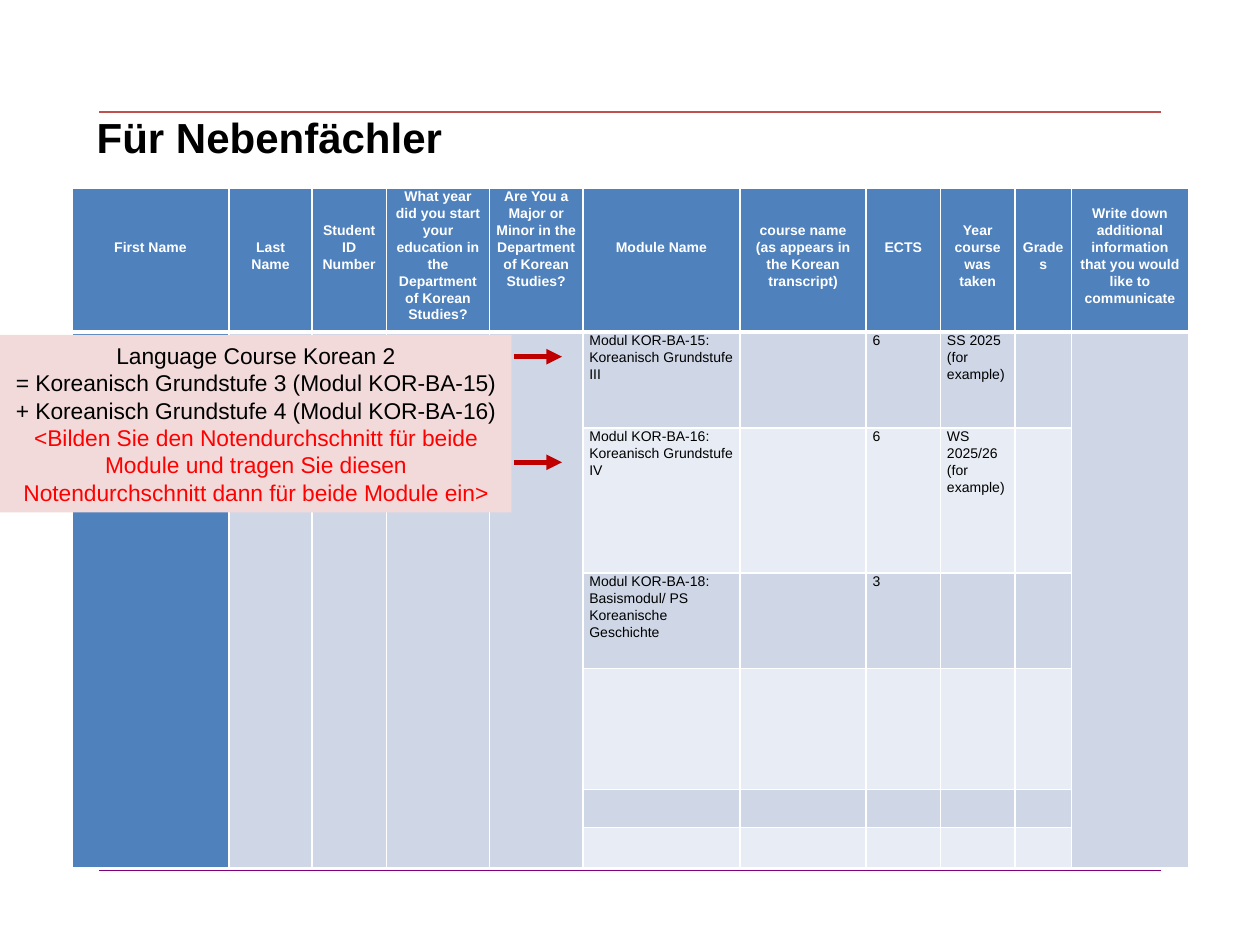
from dataclasses import dataclass

from lxml.etree import SubElement as Sub
from pptx import Presentation as Deck
from pptx.dml.color import RGBColor as Rgb
from pptx.enum.shapes import MSO_CONNECTOR as Link, MSO_SHAPE as Form
from pptx.enum.text import MSO_ANCHOR as Anchor, PP_ALIGN as Align
from pptx.oxml import parse_xml as parse_node
from pptx.oxml.ns import nsdecls, qn
from pptx.util import Cm, Pt


@dataclass(frozen=True)
class Theme:
    """Colours, type sizes and font of the slide."""
    font: str = "Arial"
    ink: str = "000000"
    white: str = "FFFFFF"
    head: str = "4F81BD"
    dark: str = "CFD7E7"
    light: str = "E8ECF4"
    note: str = "F2DADA"
    alert: str = "FF0000"
    arrow: str = "C00000"
    top: str = "C0504D"
    foot: str = "800080"
    title: int = 24
    body: int = 13
    small: int = 8


LOOK = Theme()
COLS = [3.17, 1.67, 1.5, 2.08, 1.88, 3.17, 2.54, 1.5, 1.5, 1.14, 2.36]
ROWS = [2.9, 1.94, 2.92, 1.93, 2.44, 0.76, 0.82]
TALL = [0, 1, 2, 3, 4, 10]
STEP = 0.343
HEAD = [
    (3, ["First Name"]),
    (3, ["Last Name"]),
    (2, ["Student ID Number"]),
    (0, ["What year did you start your education in the Department of Korean Studies?"]),
    (0, ["Are You a Major or Minor in the Department of Korean Studies?"]),
    (3, ["Module Name"]),
    (2, ["course name", "(as appears in the Korean transcript)"]),
    (3, ["ECTS"]),
    (2, ["Year course was taken"]),
    (3, ["Grades"]),
    (1, ["Write down additional information that you would like to communicate"]),
]
BODY = {
    (1, 5): ["Modul KOR-BA-15:", "Koreanisch Grundstufe", "III"],
    (1, 7): ["6"],
    (1, 8): ["SS 2025 (for example)"],
    (2, 5): ["Modul KOR-BA-16:", "Koreanisch Grundstufe", "IV"],
    (2, 7): ["6"],
    (2, 8): ["WS 2025/26", "(for example)"],
    (3, 5): ["Modul KOR-BA-18:", "Basismodul/ PS", "Koreanische Geschichte"],
    (3, 7): ["3"],
}
NOTE = [
    ("Language Course Korean 2", LOOK.ink),
    ("= Koreanisch Grundstufe 3 (Modul KOR-BA-15) "
     "+ Koreanisch Grundstufe 4 (Modul KOR-BA-16)", LOOK.ink),
    ("<Bilden Sie den Notendurchschnitt für beide Module und tragen Sie diesen "
     "Notendurchschnitt dann für beide Module ein>", LOOK.alert),
]


def apply(item, form):
    """Set each attribute of an item from a dict of values."""
    for name, value in form.items():
        setattr(item, name, value)


def paint(fill, tone):
    """Give a fill one solid colour."""
    fill.solid()
    fill.fore_color.rgb = Rgb.from_string(tone)


def write(frame, lines, size, bold=False, **form):
    """Write (text, colour) lines into a text frame."""
    for i, (text, tone) in enumerate(lines):
        para = frame.add_paragraph() if i else frame.paragraphs[0]
        apply(para, form)
        run = para.add_run()
        run.text = text
        apply(run.font, {"name": LOOK.font, "size": Pt(size), "bold": bold})
        run.font.color.rgb = Rgb.from_string(tone)


def rule(slide, start, end, tone, width, tip=False):
    """Draw a straight line, with an arrowhead if asked."""
    line = slide.shapes.add_connector(Link.STRAIGHT, *map(Cm, start + end))
    line.line.width = Pt(width)
    line.line.color.rgb = Rgb.from_string(tone)
    if tip:
        Sub(line.line._get_or_add_ln(), qn("a:tailEnd"), type="triangle")
    Sub(line._element.spPr, qn("a:effectLst"))


def edge(cell, base):
    """Put white borders round a cell."""
    props = cell._tc.get_or_add_tcPr()
    for i, side in enumerate("LRTB"):
        width = Pt(base if side == "B" else 1)
        props.insert(i, parse_node(
            f'<a:ln{side} {nsdecls("a")} w="{width}"><a:solidFill>'
            f'<a:srgbClr val="{LOOK.white}"/></a:solidFill></a:ln{side}>'))


def fill_cell(cell, row, col):
    """Colour, frame and write one table cell."""
    drop, lines = HEAD[col] if row == 0 else (0, BODY.get((row, col), []))
    apply(cell, {"margin_left": Cm(0.13), "margin_right": Cm(0.13),
                 "margin_top": Cm(drop * STEP), "margin_bottom": 0})
    band = LOOK.dark if row % 2 or col in TALL else LOOK.light
    paint(cell.fill, LOOK.head if row == 0 or col == 0 else band)
    edge(cell, 1 if row else 3)
    if lines:
        tone, side = (LOOK.ink, Align.LEFT) if row else (LOOK.white, Align.CENTER)
        write(cell.text_frame, [(text, tone) for text in lines], LOOK.small,
              row == 0, alignment=side, line_spacing=1.07)
    else:
        para = cell.text_frame.paragraphs[0]
        Sub(para._p, qn("a:endParaRPr"), sz=str(LOOK.small * 100))


def add_grid(slide):
    """Add the course table."""
    grid = slide.shapes.add_table(
        len(ROWS), len(COLS), Cm(1.45), Cm(3.79), Cm(sum(COLS)), Cm(sum(ROWS))).table
    grid.horz_banding = False
    for part, size in zip(grid.columns, COLS):
        part.width = Cm(size)
    for part, size in zip(grid.rows, ROWS):
        part.height = Cm(size)
    for row in range(len(ROWS)):
        for col in range(len(COLS)):
            fill_cell(grid.cell(row, col), row, col)
    for col in TALL:
        grid.cell(1, col).merge(grid.cell(len(ROWS) - 1, col))


def add_note(slide):
    """Add the tinted note on the language course."""
    box = slide.shapes.add_shape(Form.RECTANGLE, 0, Cm(6.75), Cm(10.31), Cm(3.58))
    box.shadow.inherit = False
    paint(box.fill, LOOK.note)
    box.line.fill.background()
    box.text_frame.word_wrap = True
    write(box.text_frame, NOTE, LOOK.body, alignment=Align.CENTER)


def add_title(slide):
    """Add the slide title."""
    box = slide.shapes.add_textbox(Cm(1.7), Cm(1.98), Cm(7.82), Cm(1.55))
    pad = Cm(0.25)
    apply(box.text_frame, {"word_wrap": True, "vertical_anchor": Anchor.MIDDLE,
                           "margin_left": pad, "margin_right": pad,
                           "margin_top": pad, "margin_bottom": pad})
    write(box.text_frame, [("Für Nebenfächler", LOOK.ink)], LOOK.title, True)


def main():
    """Build and save the slide."""
    deck = Deck()
    apply(deck, {"slide_width": Cm(25.4), "slide_height": Cm(19.05)})
    slide = deck.slides.add_slide(deck.slide_layouts[6])
    for y, tone in ((2.26, LOOK.top), (17.55, LOOK.foot)):
        rule(slide, (2, y), (23.4, y), tone, 0.75)
    add_grid(slide)
    add_note(slide)
    for y in (7.19, 9.32):
        rule(slide, (10.36, y), (11.33, y), LOOK.arrow, 3, True)
    add_title(slide)
    deck.save("out.pptx")


if __name__ == "__main__":
    main()
